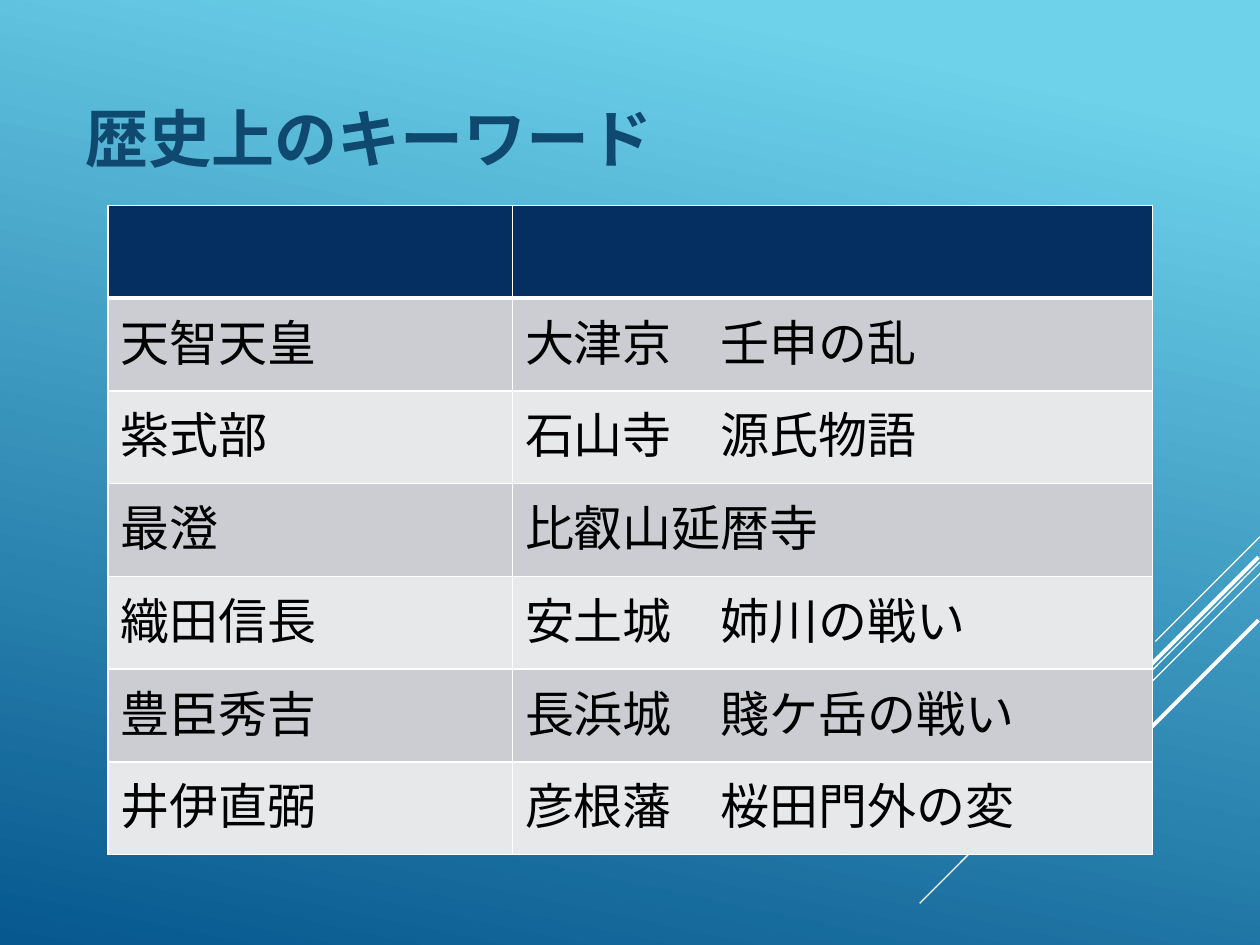
from lxml import etree
from pptx import Presentation
from pptx.dml.color import RGBColor
from pptx.enum.lang import MSO_LANGUAGE_ID
from pptx.enum.shapes import MSO_CONNECTOR
from pptx.enum.text import MSO_ANCHOR
from pptx.oxml.ns import qn
from pptx.util import Cm, Pt

STRAIGHT = MSO_CONNECTOR.STRAIGHT
MIDDLE = MSO_ANCHOR.MIDDLE
JAPANESE = MSO_LANGUAGE_ID.JAPANESE
WHITE = "FFFFFF"


def write_text(text_frame, text, size, color, bold=False):
    run = text_frame.paragraphs[0].add_run()
    run.text = text
    run.font.name = "League Spartan"
    run.font.language_id = JAPANESE
    run.font.size = Pt(size)
    run.font.bold = bold
    run.font.color.rgb = RGBColor.from_string(color)


def add_border(cell, side, width):
    """Add a white border; call before the cell is filled, as the schema puts lines first."""
    properties = cell._tc.get_or_add_tcPr()
    line = etree.SubElement(properties, qn(f"a:ln{side}"), w=str(Pt(width)))
    fill = etree.SubElement(line, qn("a:solidFill"))
    etree.SubElement(fill, qn("a:srgbClr"), val=WHITE)


presentation = Presentation()
presentation.slide_width = Cm(25.4)
presentation.slide_height = Cm(19.05)
slide = presentation.slides.add_slide(presentation.slide_layouts[6])

# Background
background = slide.background.fill
background.gradient()
background.gradient_angle = 258
for stop, position, color in zip(background.gradient_stops, (0.1, 1), ("6ED2EB", "06588E")):
    stop.position = position
    stop.color.rgb = RGBColor.from_string(color)

# Diagonal lines: start x, start y, end x, end y, width
diagonals = [
    (25.4, 10.82, 23.29, 12.93, 0.75),
    (25.4, 11.33, 18.54, 18.21, 0.75),
    (25.4, 11.56, 21.03, 15.93, 0.75),
    (25.37, 11.23, 21.39, 15.21, 2.25),
    (25.37, 12.5, 22.48, 15.39, 2.25),
]
for *ends, width in diagonals:
    connector = slide.shapes.add_connector(STRAIGHT, *[Cm(value) for value in ends])
    connector.line.color.rgb = RGBColor.from_string(WHITE)
    connector.line.width = Pt(width)
    etree.SubElement(connector._element.spPr, qn("a:effectLst"))

# Title
title = slide.shapes.add_textbox(Cm(1.47), Cm(1.4), Cm(22.25), Cm(2.74))
title.text_frame.word_wrap = True
title.text_frame.vertical_anchor = MIDDLE
write_text(title.text_frame, "歴史上のキーワード", size=36, color="0F496F", bold=True)

# Keyword table
keywords = [
    ("", ""),
    ("天智天皇", "大津京　壬申の乱"),
    ("紫式部", "石山寺　源氏物語"),
    ("最澄", "比叡山延暦寺"),
    ("織田信長", "安土城　姉川の戦い"),
    ("豊臣秀吉", "長浜城　賤ケ岳の戦い"),
    ("井伊直弼", "彦根藩　桜田門外の変"),
]
column_widths = (8.15, 12.9)
row_height = 1.87
table = slide.shapes.add_table(
    len(keywords), len(column_widths), Cm(2.18), Cm(4.14),
    Cm(sum(column_widths)), Cm(row_height * len(keywords)),
).table
for column, width in zip(table.columns, column_widths):
    column.width = Cm(width)

for row_index, row_texts in enumerate(keywords):
    table.rows[row_index].height = Cm(row_height)
    if row_index == 0:
        fill_color = "052F61"
    else:
        fill_color = "CCCDD2" if row_index % 2 else "E7E8EA"
    top_width = 3 if row_index == 1 else 1
    bottom_width = 3 if row_index == 0 else 1
    for column_index, text in enumerate(row_texts):
        cell = table.cell(row_index, column_index)
        for side, width in zip("LRTB", (1, 1, top_width, bottom_width)):
            add_border(cell, side, width)
        cell.fill.solid()
        cell.fill.fore_color.rgb = RGBColor.from_string(fill_color)
        if text:
            write_text(cell.text_frame, text, size=28, color="000000")

presentation.save("out.pptx")
